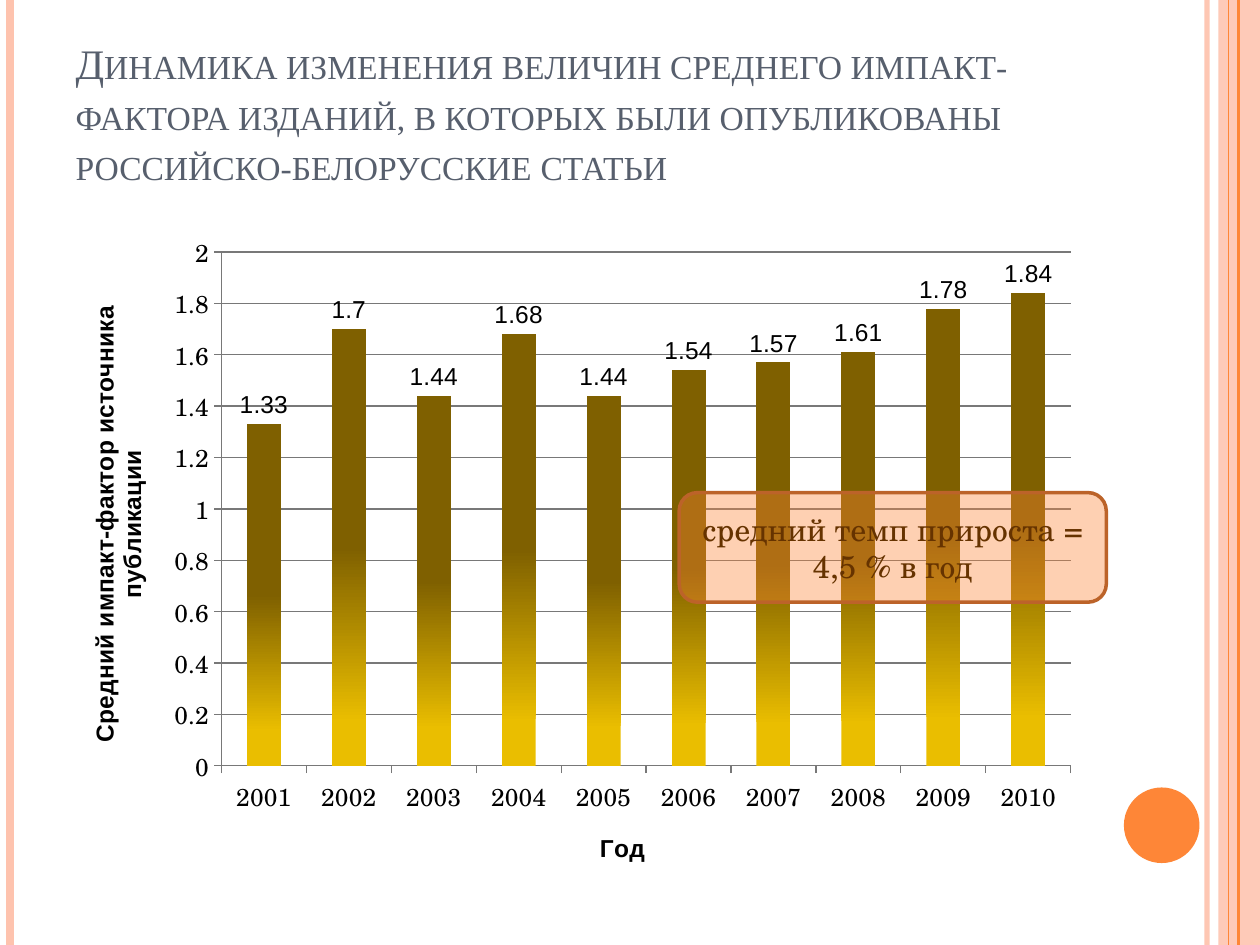
from lxml.etree import SubElement
from pptx import Presentation
from pptx.chart.data import CategoryChartData
from pptx.dml.color import RGBColor
from pptx.enum.chart import XL_CHART_TYPE as Chart, XL_LABEL_POSITION as LabelPos, XL_TICK_MARK as Tick
from pptx.enum.shapes import MSO_CONNECTOR as Conn, MSO_SHAPE as Shape
from pptx.enum.text import MSO_ANCHOR as Anchor, MSO_AUTO_SIZE as AutoSize, PP_ALIGN as Align
from pptx.oxml import parse_xml
from pptx.oxml.ns import nsdecls, qn
from pptx.util import Inches, Pt

TITLE = ("Динамика изменения величин среднего импакт-фактора изданий, "
         "в которых были опубликованы российско-белорусские статьи")
CALLOUT = "средний темп прироста = 4,5 % в год"
X_TITLE = "Год"
Y_TITLE = "Средний импакт-фактор источника публикации"
YEARS = [str(y) for y in range(2001, 2011)]
IMPACT = [1.33, 1.7, 1.44, 1.68, 1.44, 1.54, 1.57, 1.61, 1.78, 1.84]

COLORS = {"pink": "FEC3AE", "orange": "FE8637", "title": "575F6D", "rust": "BC6329",
          "brown": "663300", "black": "000000", "grid": "787878",
          "bar_low": "EABE00", "bar_high": "7F6000"}
SERIF, SANS, TIMES = "TeX Gyre Schola", "Arial", "Times New Roman"
STRIPES = [(9.58, "pink", 3, 93), (0.08, "pink", 4.5, 100),
           (9.83, "orange", 1.5, 100), (9.75, "orange", 0.75, 100)]
CHART_BOX = (0.5, 1.75, 8.17, 5.33)
PLOT_BOX = (1.76, 2.0, 6.74, 4.08)


def rgb(name):
    return RGBColor.from_string(COLORS[name])


def box(dims):
    return [Inches(d) for d in dims]


def set_font(font, name, size, color, bold=False):
    font.name, font.size, font.bold = name, Pt(size), bold
    font.color.rgb = rgb(color)


def set_alpha(sp, percent):
    clr = next(sp._element.spPr.iter(qn("a:srgbClr")))
    SubElement(clr, qn("a:alpha")).set("val", str(percent * 1000))


def add_stripe(s, x, color, width, opacity):
    line = s.shapes.add_connector(Conn.STRAIGHT, *box((x, 0, x, 7.5)))
    line.line.color.rgb = rgb(color)
    line.line.width = Pt(width)
    set_alpha(line, opacity)
    SubElement(line._element.spPr, qn("a:effectLst"))


def add_filled(s, kind, dims, color, opacity=100):
    sp = s.shapes.add_shape(kind, *box(dims))
    sp.shadow.inherit = False
    sp.fill.solid()
    sp.fill.fore_color.rgb = rgb(color)
    set_alpha(sp, opacity)
    sp.line.fill.background()
    return sp


def style_axis(axis, title):
    tf = axis.axis_title.text_frame
    tf.text = title
    set_font(tf.paragraphs[0].runs[0].font, SANS, 14, "black", True)
    set_font(axis.tick_labels.font, SERIF, 14, "black")
    axis.major_tick_mark = Tick.OUTSIDE
    axis.format.line.color.rgb = rgb("grid")


def place_plot(chart):
    (cx, cy, cw, ch), (px, py, pw, ph) = CHART_BOX, PLOT_BOX
    parts = {"x": (px - cx) / cw, "y": (py - cy) / ch, "w": pw / cw, "h": ph / ch}
    modes = "".join(f'<c:{k}Mode val="edge"/>' for k in "xy")
    values = "".join(f'<c:{k} val="{v:.3f}"/>' for k, v in parts.items())
    area = next(chart._chartSpace.iter(qn("c:plotArea")))
    for old in area.findall(qn("c:layout")):
        area.remove(old)
    area.insert(0, parse_xml(f'<c:layout {nsdecls("c")}><c:manualLayout>'
                             f'<c:layoutTarget val="inner"/>{modes}{values}'
                             '</c:manualLayout></c:layout>'))


def add_impact_chart(s):
    data = CategoryChartData()
    data.categories = YEARS
    data.add_series("Series 1", IMPACT)
    chart = s.shapes.add_chart(Chart.COLUMN_CLUSTERED, *box(CHART_BOX), data).chart
    chart.has_legend = chart.has_title = False
    set_font(chart.font, SERIF, 10, "black")
    style_axis(chart.category_axis, X_TITLE)
    axis = chart.value_axis
    style_axis(axis, Y_TITLE)
    axis.minimum_scale, axis.maximum_scale, axis.major_unit = 0, 2, 0.2
    axis.major_gridlines.format.line.color.rgb = rgb("grid")

    plot = chart.plots[0]
    plot.gap_width, plot.vary_by_categories = 150, False
    plot.has_data_labels = True
    labels = plot.data_labels
    labels.show_value, labels.position = True, LabelPos.OUTSIDE_END
    set_font(labels.font, SANS, 14, "black")
    fill = plot.series[0].format.fill
    fill.gradient()
    fill.gradient_angle = 90
    for stop, (pos, color) in zip(fill.gradient_stops, [(0.1, "bar_low"), (0.5, "bar_high")]):
        stop.position = pos
        stop.color.rgb = rgb(color)
    place_plot(chart)


def add_title(s):
    sp = s.shapes.title
    sp.left, sp.top, sp.width, sp.height = box((0.5, 0.3, 8.17, 1.25))
    tf = sp.text_frame
    tf.text = TITLE
    tf.word_wrap, tf.auto_size, tf.vertical_anchor = True, AutoSize.NONE, Anchor.BOTTOM
    p = tf.paragraphs[0]
    p.alignment = Align.LEFT
    r = p.runs[0]
    set_font(r.font, TIMES, 24, "title")
    r.font._element.set("cap", "small")


def add_callout(s):
    sp = add_filled(s, Shape.ROUNDED_RECTANGLE, (5.39, 3.91, 3.39, 0.87), "orange", 38)
    sp.line.color.rgb = rgb("rust")
    sp.line.width = Pt(2)
    tf = sp.text_frame
    tf.text = CALLOUT
    tf.word_wrap, tf.vertical_anchor = True, Anchor.MIDDLE
    p = tf.paragraphs[0]
    p.alignment = Align.CENTER
    set_font(p.runs[0].font, SERIF, 18, "brown")


def main():
    prs = Presentation()
    prs.slide_width, prs.slide_height = Inches(10), Inches(7.5)
    s = prs.slides.add_slide(prs.slide_layouts[5])
    add_filled(s, Shape.RECTANGLE, (9.67, 0, 0.33, 7.5), "pink", 87)
    for stripe in STRIPES:
        add_stripe(s, *stripe)
    add_filled(s, Shape.OVAL, (8.92, 6.25, 0.6, 0.6), "orange")
    add_title(s)
    add_impact_chart(s)
    add_callout(s)
    prs.save("out.pptx")


if __name__ == "__main__":
    main()
